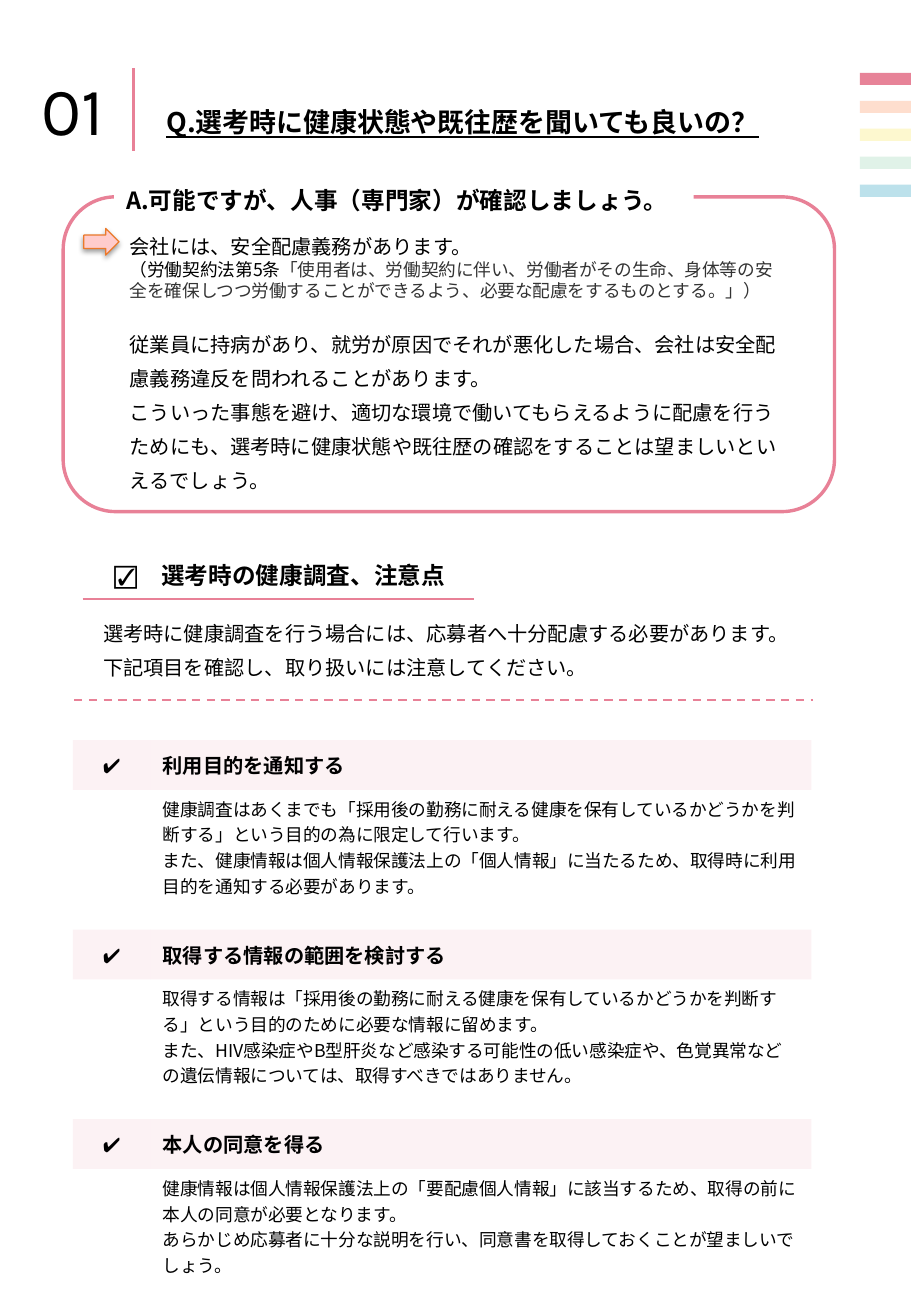
from pptx import Presentation
from pptx.dml.color import RGBColor
from pptx.enum.dml import MSO_LINE
from pptx.enum.shapes import MSO_CONNECTOR, MSO_SHAPE as Kind
from pptx.enum.text import MSO_ANCHOR as Anchor, MSO_AUTO_SIZE as Fit, PP_ALIGN as Align
from pptx.oxml import parse_xml
from pptx.oxml.ns import nsdecls, qn
from pptx.util import Emu, Pt

PX = 9144  # 100 px to the inch
FONT = "Noto Sans CJK JP"
PINK = RGBColor(0xE8, 0x81, 0x97)
BLUSH = RGBColor(0xFF, 0xCC, 0xCC)
RUST = RGBColor(0xEB, 0x79, 0x2A)
WHITE = RGBColor(0xFF, 0xFF, 0xFF)
BLACK = RGBColor(0, 0, 0)
GREY = RGBColor(0x33, 0x33, 0x33)
STRIPES = [
    (RGBColor(0xDD, 0x49, 0x68), 68),
    (RGBColor(0xFD, 0x9A, 0x69), 32),
    (RGBColor(0xF9, 0xEB, 0x6B), 32),
    (RGBColor(0x9F, 0xD9, 0xB8), 32),
    (RGBColor(0x31, 0xA2, 0xC2), 32),
]
NO_GRID = "{2D5ABB26-0587-4C30-8999-92F81FD0307C}"

QUERY = "Q.選考時に健康状態や既往歴を聞いても良いの？"
REPLY = "A.可能ですが、人事（専門家）が確認しましょう。"
DUTY = "会社には、安全配慮義務があります。"
LAW = "（労働契約法第5条"
QUOTE = ("「使用者は、労働契約に伴い、労働者がその生命、身体等の安全を確保しつつ"
         "労働することができるよう、必要な配慮をするものとする。」）")
REASONS = [
    "従業員に持病があり、就労が原因でそれが悪化した場合、会社は安全配慮義務違反を問われることがあります。",
    "こういった事態を避け、適切な環境で働いてもらえるように配慮を行うためにも、"
    "選考時に健康状態や既往歴の確認をすることは望ましいといえるでしょう。",
]
NOTES = "☑\u3000選考時の健康調査、注意点".replace("\u3000", "　")
INTRO = ("選考時に健康調査を行う場合には、応募者へ十分配慮する必要があります。"
         "下記項目を確認し、取り扱いには注意してください。")
CHECKS = [
    ("利用目的を通知する",
     "健康調査はあくまでも「採用後の勤務に耐える健康を保有しているかどうかを判断する」という目的の為に限定して行います。",
     "また、健康情報は個人情報保護法上の「個人情報」に当たるため、取得時に利用目的を通知する必要があります。"),
    ("取得する情報の範囲を検討する",
     "取得する情報は「採用後の勤務に耐える健康を保有しているかどうかを判断する」という目的のために必要な情報に留めます。",
     "また、HIV感染症やB型肝炎など感染する可能性の低い感染症や、色覚異常などの遺伝情報については、取得すべきではありません。"),
    ("本人の同意を得る",
     "健康情報は個人情報保護法上の「要配慮個人情報」に該当するため、取得の前に本人の同意が必要となります。",
     "あらかじめ応募者に十分な説明を行い、同意書を取得しておくことが望ましいでしょう。"),
]


def px(*vals):
    return [Emu(v * PX) for v in vals]


def style(para, size, bold=False, font=FONT, color=BLACK, align=Align.LEFT):
    para.alignment = align
    for run in para.runs:
        face = run.font
        face.size, face.bold, face.name = Pt(size), bold, font
        face.color.rgb = color
        ea = run._r.get_or_add_rPr().makeelement(qn("a:ea"), {"typeface": font})
        face._element.find(qn("a:latin")).addnext(ea)


def paint(fill, owner, color, alpha=100):
    fill.solid()
    fill.fore_color.rgb = color
    if alpha < 100:
        tint = next(owner.iter(qn("a:srgbClr")))
        tint.append(tint.makeelement(qn("a:alpha"), {"val": str(alpha * 1000)}))


def block(shapes, kind, box, color, alpha=100, edge=None, width=1):
    shape = shapes.add_shape(kind, *px(*box))
    shape.shadow.inherit = False
    paint(shape.fill, shape._element, color, alpha)
    if edge is None:
        shape.line.fill.background()
    else:
        shape.line.color.rgb, shape.line.width = edge, Pt(width)
    return shape


def rule(slide, x1, y1, x2, y2, width):
    line = slide.shapes.add_connector(MSO_CONNECTOR.STRAIGHT, *px(x1, y1, x2, y2))
    line.line.color.rgb, line.line.width = PINK, Pt(width)
    props = line._element.spPr
    props.append(props.makeelement(qn("a:effectLst"), {}))
    return line


def write(shape, text, size, **look):
    frame = shape.text_frame
    frame.word_wrap, frame.auto_size = True, Fit.NONE
    frame.vertical_anchor = Anchor.MIDDLE
    frame.text = text
    for para in frame.paragraphs:
        style(para, size, **look)
    return frame


def header(slide, x, y):
    """Number, upright rule and question."""
    num = slide.shapes.add_textbox(*px(x, y, 91, 67))
    frame = write(num, "01", 40, font="Karla")
    frame.vertical_anchor = Anchor.TOP
    frame.margin_left = frame.margin_right = frame.margin_top = frame.margin_bottom = 0
    rule(slide, x + 76, y + 68, x + 76, y, 1.5)
    title = slide.shapes.title
    title.left, title.top, title.width, title.height = px(x + 89, y + 25, 516, 39)
    frame = write(title, QUERY, 16, bold=True, align=Align.CENTER)
    frame.paragraphs[0].runs[0].font.underline = True


def stripes(slide, x, y, w, h, step):
    """Colour bars at the right edge."""
    group = slide.shapes.add_group_shape()
    for i, (color, alpha) in enumerate(STRIPES):
        block(group.shapes, Kind.RECTANGLE, (x, y + i * step, w, h), color, alpha)


def answer(slide, x, y, w, h):
    """Rounded frame with its label, arrow and text."""
    shapes = slide.shapes
    block(shapes, Kind.ROUNDED_RECTANGLE, (x, y, w, h), WHITE, edge=PINK, width=2)
    label = block(shapes, Kind.RECTANGLE, (x + 42, y - 10, 477, 26), WHITE)
    write(label, REPLY, 14, bold=True)
    arrow = block(shapes, Kind.RIGHT_ARROW, (x + 17, y + 26, 29, 22), BLUSH, edge=RUST, width=0.75)
    effects = arrow._element.spPr.find(qn("a:effectLst"))
    effects.append(parse_xml(
        f'<a:outerShdw {nsdecls("a")} blurRad="39400" dist="20300" dir="5400000" rotWithShape="0">'
        '<a:srgbClr val="000000"><a:alpha val="38000"/></a:srgbClr></a:outerShdw>'))
    body = shapes.add_textbox(*px(x + 45, y + 28, 564, 209))
    frame = write(body, "\n".join([DUTY, LAW, *REASONS]), 12)
    duty, law, *reasons = frame.paragraphs
    duty.line_spacing = Pt(21.4)
    law.add_run().text = QUOTE
    style(law, 10.5)
    law.runs[1].font.color.rgb = GREY
    law.line_spacing = Pt(12.5)
    for para in reasons:
        para.line_spacing = Pt(20.25)
    reasons[0].space_before = Pt(12.5)


def notes(slide, x, y):
    """Section heading, introduction and dashed rule."""
    head = block(slide.shapes, Kind.RECTANGLE, (x + 23, y, 453, 39), WHITE)
    write(head, NOTES, 14, bold=True)
    rule(slide, x + 7, y + 39, x + 329, y + 39, 0.75)
    intro = slide.shapes.add_textbox(*px(x + 14, y + 36, 581, 83))
    write(intro, INTRO, 12).paragraphs[0].line_spacing = Pt(20.25)
    rule(slide, x, y + 122, x + 608, y + 122, 1.25).line.dash_style = MSO_LINE.DASH


def checks(slide, x, y, cols, rows):
    """Checklist: a tinted heading row and a text row for each item."""
    size = px(x, y, sum(cols), sum(rows) * len(CHECKS))
    table = slide.shapes.add_table(2 * len(CHECKS), 2, *size).table
    table.first_row = table.horz_banding = False
    table._tbl.tblPr.find(qn("a:tableStyleId")).text = NO_GRID
    for col, width in zip(table.columns, px(*cols)):
        col.width = width
    for i, row in enumerate(table.rows):
        row.height = px(*rows)[i % 2]
        for cell in row.cells:
            if i % 2:
                cell.fill.background()
            else:
                paint(cell.fill, cell._tc, PINK, 10)
                cell.vertical_anchor = Anchor.MIDDLE
    for i, (head, *lines) in enumerate(CHECKS):
        tick, name, text = table.cell(2 * i, 0), table.cell(2 * i, 1), table.cell(2 * i + 1, 1)
        tick.text, name.text, text.text = "✔", head, "\n".join(lines)
        style(tick.text_frame.paragraphs[0], 12, align=Align.CENTER)
        style(name.text_frame.paragraphs[0], 12, bold=True)
        for para in text.text_frame.paragraphs:
            style(para, 10.5)


def main():
    deck = Presentation()
    deck.slide_width, deck.slide_height = px(750, 1083)
    slide = deck.slides.add_slide(deck.slide_layouts[5])
    header(slide, 34, 56)
    stripes(slide, 708, 60, 42, 10, 23)
    answer(slide, 52, 162, 635, 259)
    notes(slide, 61, 454)
    checks(slide, 60, 609, (64, 544), (41, 115))
    deck.save("out.pptx")


if __name__ == "__main__":
    main()
